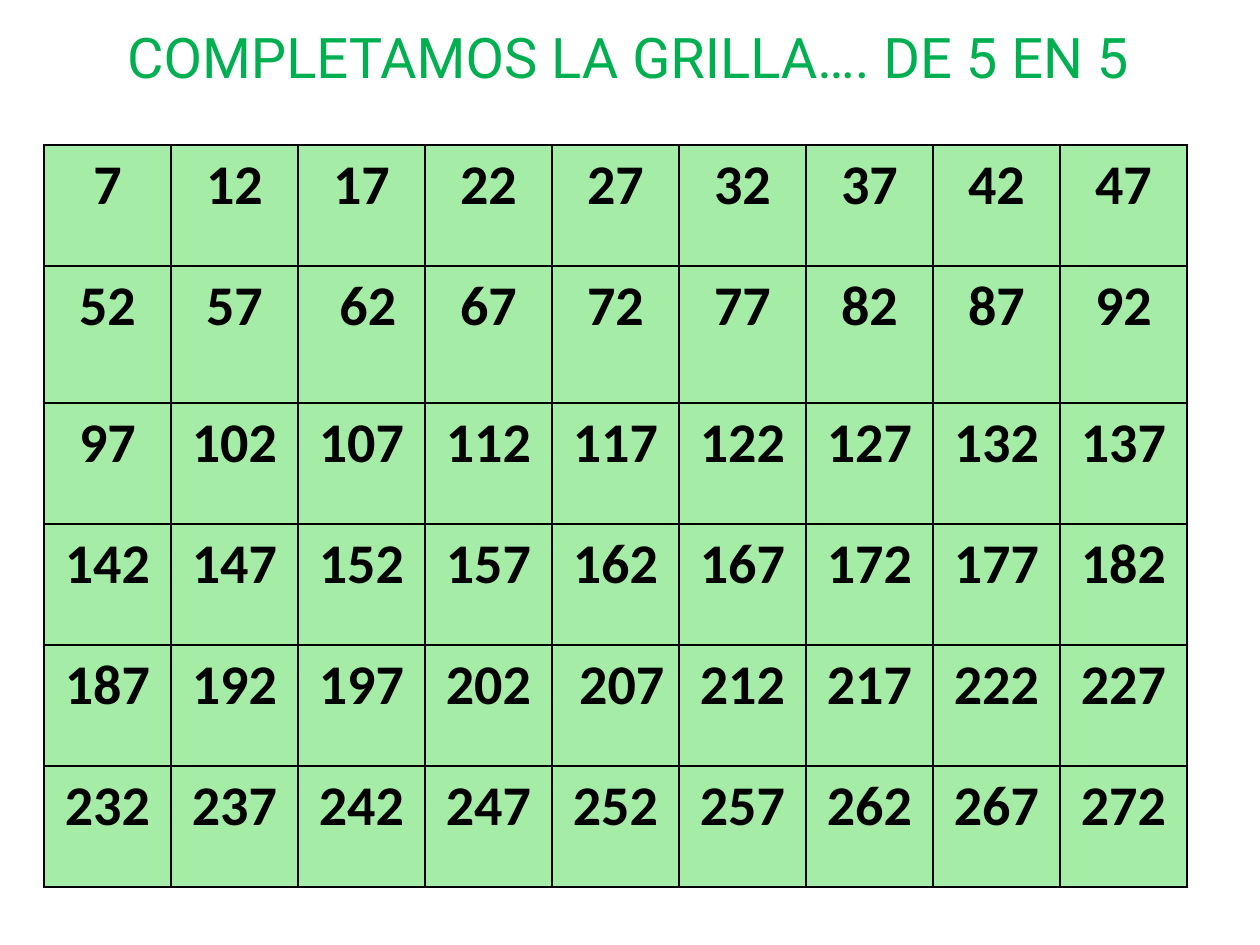
from dataclasses import dataclass

from lxml import etree
from pptx import Presentation
from pptx.dml.color import RGBColor
from pptx.enum.text import MSO_ANCHOR, PP_ALIGN
from pptx.oxml.ns import qn
from pptx.util import Emu, Pt

CENTER = PP_ALIGN.CENTER
MIDDLE = MSO_ANCHOR.MIDDLE
PX = 914400 // 126


@dataclass(frozen=True)
class Theme:
    title_color: str = "00B050"
    number_color: str = "000000"
    cell_fill: str = "A5EDA7"
    border_color: str = "000000"
    title_font: str = "Roboto"
    number_font: str = "Calibri"
    text_size: int = 32
    border_width: int = 1


THEME = Theme()
SLIDE_SIZE = (1260, 945)
TITLE = "COMPLETAMOS LA GRILLA…. DE 5 EN 5 "
TITLE_BOX = (25, -23, 1221, 158)
FIRST_NUMBER, STEP = 7, 5
INDENTED_NUMBERS = {62, 207}
GRID_LEFT, GRID_TOP = 44, 145
COLUMN_WIDTHS = [127] * 9
ROW_HEIGHTS = [121, 137, 121, 121, 121, 121]


def px(*lengths):
    return [Emu(length * PX) for length in lengths]


def write(text_frame, text, font_name, color, bold):
    text_frame.text = text
    paragraph = text_frame.paragraphs[0]
    paragraph.alignment = CENTER
    font = paragraph.runs[0].font
    font.name = font_name
    font.size = Pt(THEME.text_size)
    font.bold = bold
    font.color.rgb = RGBColor.from_string(color)


def style_cell(cell):
    properties = cell._tc.get_or_add_tcPr()
    for side in ("a:lnL", "a:lnR", "a:lnT", "a:lnB"):
        line = etree.SubElement(properties, qn(side), w=str(Pt(THEME.border_width)))
        fill = etree.SubElement(line, qn("a:solidFill"))
        etree.SubElement(fill, qn("a:srgbClr"), val=THEME.border_color)
    cell.fill.solid()
    cell.fill.fore_color.rgb = RGBColor.from_string(THEME.cell_fill)


def add_title(slide):
    text_frame = slide.shapes.add_textbox(*px(*TITLE_BOX)).text_frame
    text_frame.word_wrap = True
    text_frame.vertical_anchor = MIDDLE
    write(text_frame, TITLE, THEME.title_font, THEME.title_color, False)


def add_grid(slide):
    row_count, column_count = len(ROW_HEIGHTS), len(COLUMN_WIDTHS)
    bounds = px(GRID_LEFT, GRID_TOP, sum(COLUMN_WIDTHS), sum(ROW_HEIGHTS))
    table = slide.shapes.add_table(row_count, column_count, *bounds).table
    table.first_row = table.horz_banding = False
    for column, width in zip(table.columns, px(*COLUMN_WIDTHS)):
        column.width = width
    for row, height in zip(table.rows, px(*ROW_HEIGHTS)):
        row.height = height
    for index, cell in enumerate(table.iter_cells()):
        number = FIRST_NUMBER + STEP * index
        text = f" {number}" if number in INDENTED_NUMBERS else str(number)
        write(cell.text_frame, text, THEME.number_font, THEME.number_color, True)
        style_cell(cell)


def main():
    presentation = Presentation()
    presentation.slide_width, presentation.slide_height = px(*SLIDE_SIZE)
    slide = presentation.slides.add_slide(presentation.slide_layouts[6])
    add_title(slide)
    add_grid(slide)
    presentation.save("out.pptx")


if __name__ == "__main__":
    main()
